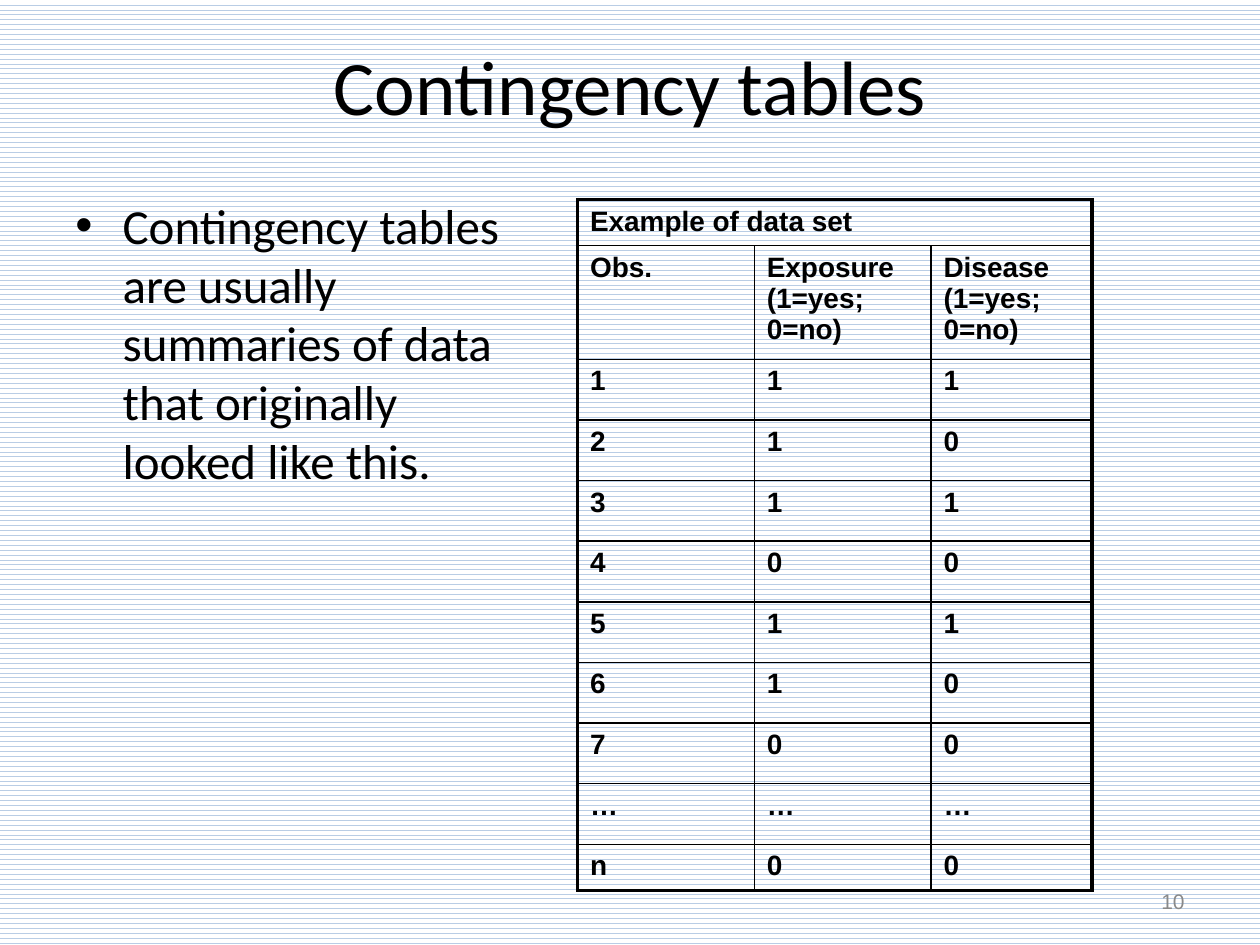
from lxml import etree
from pptx import Presentation
from pptx.dml.color import RGBColor
from pptx.enum.dml import MSO_PATTERN
from pptx.enum.text import MSO_ANCHOR, PP_ALIGN
from pptx.oxml.ns import qn
from pptx.util import Pt

WAVE = MSO_PATTERN.WAVE
TOP, MIDDLE = MSO_ANCHOR.TOP, MSO_ANCHOR.MIDDLE
LEFT, CENTER, RIGHT = PP_ALIGN.LEFT, PP_ALIGN.CENTER, PP_ALIGN.RIGHT
COLORS = {"text": "000000", "number": "898989", "wave": "B9CDE5", "paper": "FFFFFF"}
OUTER, INNER = 2.25, 1

OBSERVATIONS = [
    ("1", "1", "1"),
    ("2", "1", "0"),
    ("3", "1", "1"),
    ("4", "0", "0"),
    ("5", "1", "1"),
    ("6", "1", "0"),
    ("7", "0", "0"),
    ("…", "…", "…"),
    ("n", "0", "0"),
]
DATA_SET = [
    ("Example of data set", "", ""),
    ("Obs.", "Exposure (1=yes; 0=no)", "Disease (1=yes; 0=no)"),
    *OBSERVATIONS,
]


def rgb(name):
    return RGBColor.from_string(COLORS[name])


class SlideBuilder:
    def __init__(self, slide):
        self.slide = slide

    def background(self):
        fill = self.slide.background.fill
        fill.patterned()
        fill.pattern = WAVE
        fill.fore_color.rgb = rgb("wave")
        fill.back_color.rgb = rgb("paper")

    def style(self, paragraph, size, font, color="text", bold=False):
        paragraph.font.size = Pt(size)
        paragraph.font.name = font
        paragraph.font.bold = bold
        paragraph.font.color.rgb = rgb(color)

    def text(self, words, box, size, font="Calibri", color="text", align=LEFT, anchor=TOP):
        frame = self.slide.shapes.add_textbox(*map(Pt, box)).text_frame
        frame.word_wrap = True
        frame.vertical_anchor = anchor
        paragraph = frame.paragraphs[0]
        paragraph.text = words
        paragraph.alignment = align
        self.style(paragraph, size, font, color)
        return paragraph

    def bullet(self, words, box, size):
        paragraph = self.text(words, box, size)
        paragraph.space_before = Pt(size * 0.2)
        properties = paragraph._p.get_or_add_pPr()
        properties.set("marL", str(Pt(27)))
        properties.set("indent", str(Pt(-27)))
        mark_font = etree.Element(qn("a:buFont"), typeface="Arial")
        mark = etree.Element(qn("a:buChar"), char="•")
        at = properties.index(properties.find(qn("a:defRPr")))
        properties[at:at] = [mark_font, mark]

    def borders(self, cell, widths):
        """Draw the left, right, top and bottom lines of a cell, in that order."""
        properties = cell._tc.get_or_add_tcPr()
        for position, (side, width) in enumerate(zip("LRTB", widths)):
            line = etree.Element(qn(f"a:ln{side}"), w=str(Pt(width)))
            fill = etree.SubElement(line, qn("a:solidFill"))
            etree.SubElement(fill, qn("a:srgbClr"), val=COLORS["text"])
            properties.insert(position, line)

    def table(self, rows, left, top, widths, heights, size):
        """Draw a ruled table whose first row is one merged heading."""
        box = left, top, sum(widths), sum(heights)
        table = self.slide.shapes.add_table(len(rows), len(widths), *map(Pt, box)).table
        table.first_row = table.horz_banding = False
        for column, width in zip(table.columns, widths):
            column.width = Pt(width)
        for row, height in zip(table.rows, heights):
            row.height = Pt(height)
        table.cell(0, 0).merge(table.cell(0, len(widths) - 1))

        for r, values in enumerate(rows):
            for c, words in enumerate(values):
                cell = table.cell(r, c)
                cell.fill.background()
                paragraph = cell.text_frame.paragraphs[0]
                paragraph.text = words
                paragraph.space_before = Pt(size * 0.2)
                self.style(paragraph, size, "Arial", bold=True)
                right_edge = c + cell.span_width == len(widths)
                on_edge = (c == 0, right_edge, r == 0, r == len(rows) - 1)
                self.borders(cell, [OUTER if edge else INNER for edge in on_edge])


def main():
    deck = Presentation()
    deck.slide_width, deck.slide_height = Pt(720), Pt(540)
    page = SlideBuilder(deck.slides.add_slide(deck.slide_layouts[6]))
    page.background()
    page.text("Contingency tables", (36, 3.6, 648, 90), 44, align=CENTER, anchor=MIDDLE)
    page.bullet(
        "Contingency tables are usually summaries of data that originally looked like this.",
        (36, 108, 270, 240), 28)
    heights = [26.4, 64.9] + [34.65] * (len(OBSERVATIONS) - 1) + [26.4]
    page.table(DATA_SET, 330, 114, [101, 101, 92], heights, 16)
    page.text("10", (516, 500.5, 168, 28.8), 12, "Arial", "number", RIGHT, MIDDLE)
    deck.save("out.pptx")


if __name__ == "__main__":
    main()
